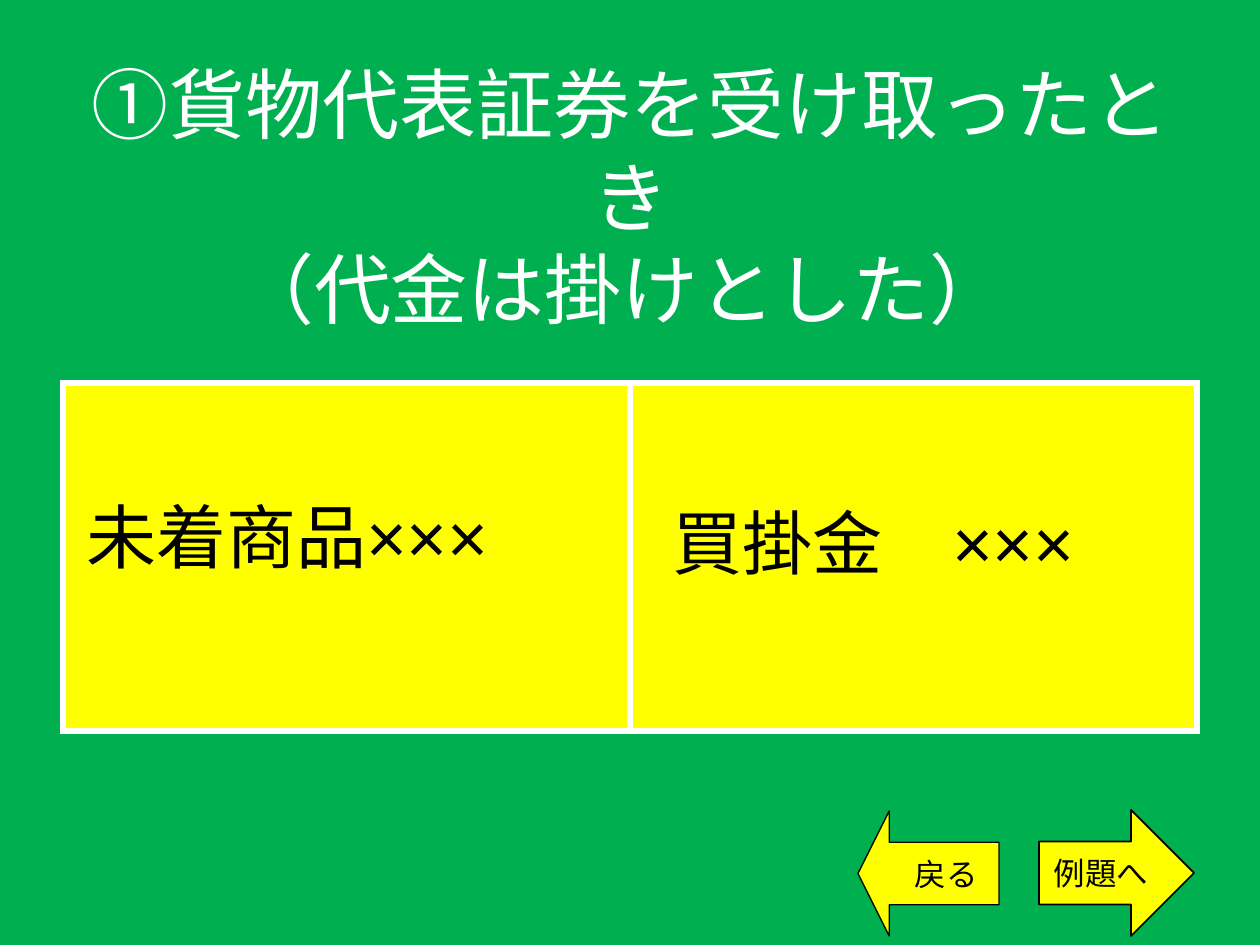
from lxml.etree import SubElement
from pptx import Presentation
from pptx.dml.color import RGBColor
from pptx.enum.shapes import MSO_SHAPE
from pptx.enum.text import MSO_ANCHOR, MSO_AUTO_SIZE, PP_ALIGN
from pptx.oxml.ns import qn
from pptx.util import Emu, Pt

COLORS = {"green": "00B050", "yellow": "FFFF00", "white": "FFFFFF", "black": "000000"}
FONT = "Arial"
SCALE = 914400 / 126

TITLE = "①貨物代表証券を受け取ったとき\v（代金は掛けとした） "
TITLE_BOX = (64, 96, 1134, 199)
TABLE_BOX = (63, 383, 1134, 348)
DEBIT = ("未着商品×××", (74, 403, 536, 265))
CREDIT = ("買掛金　×××", (660, 493, 491, 97))
# label, preset, box, head ratio, line width, alignment, right margin
ARROWS = [
    ("戻る", MSO_SHAPE.LEFT_ARROW, (858, 811, 141, 125), 0.25, 0.75, PP_ALIGN.RIGHT, 21),
    ("例題へ", MSO_SHAPE.RIGHT_ARROW, (1039, 810, 155, 126), 0.5, 1, PP_ALIGN.CENTER, 0),
]


def px(n):
    return Emu(round(n * SCALE))


def place(box):
    return [px(n) for n in box]


def rgb(name):
    return RGBColor.from_string(COLORS[name])


def fill(target, color):
    target.fill.solid()
    target.fill.fore_color.rgb = rgb(color)


def write(tf, text, size, color="black", align=PP_ALIGN.LEFT,
          anchor=MSO_ANCHOR.MIDDLE, wrap=True):
    tf.text = text
    tf.word_wrap = wrap
    tf.auto_size = MSO_AUTO_SIZE.NONE
    tf.vertical_anchor = anchor
    p = tf.paragraphs[0]
    p.alignment = align
    for r in p.runs:
        r.font.size = Pt(size)
        r.font.name = FONT
        r.font.color.rgb = rgb(color)


def border(cell, color, width):
    tcPr = cell._tc.get_or_add_tcPr()
    for i, side in enumerate(("lnL", "lnR", "lnT", "lnB")):
        ln = tcPr.makeelement(qn(f"a:{side}"), {"w": str(Pt(width))})
        solid = SubElement(ln, qn("a:solidFill"))
        SubElement(solid, qn("a:srgbClr"), val=COLORS[color])
        tcPr.insert(i, ln)


def add_shape(s, preset, box, color):
    sp = s.shapes.add_shape(preset, *place(box))
    sp.shadow.inherit = False
    fill(sp, color)
    return sp


def main():
    prs = Presentation()
    prs.slide_width, prs.slide_height = px(1260), px(945)
    s = prs.slides.add_slide(prs.slide_layouts[5])
    fill(s.background, "green")

    title = s.shapes.title
    title.left, title.top, title.width, title.height = place(TITLE_BOX)
    write(title.text_frame, TITLE, 44, "white", PP_ALIGN.CENTER)

    table = s.shapes.add_table(1, 2, *place(TABLE_BOX)).table
    for cell in table.iter_cells():
        fill(cell, "yellow")
        border(cell, "white", 4.5)

    text, box = CREDIT
    credit = s.shapes.add_textbox(*place(box))
    write(credit.text_frame, text, 40, anchor=MSO_ANCHOR.TOP, wrap=False)

    text, box = DEBIT
    debit = add_shape(s, MSO_SHAPE.RECTANGLE, box, "yellow")
    debit.line.fill.background()
    write(debit.text_frame, text, 40)

    for text, preset, box, head, width, align, margin in ARROWS:
        arrow = add_shape(s, preset, box, "yellow")
        arrow.adjustments[0], arrow.adjustments[1] = 0.5, head
        arrow.line.color.rgb = rgb("black")
        arrow.line.width = Pt(width)
        tf = arrow.text_frame
        tf.margin_left, tf.margin_right = 0, px(margin)
        write(tf, text, 18, align=align)

    prs.save("out.pptx")


if __name__ == "__main__":
    main()
